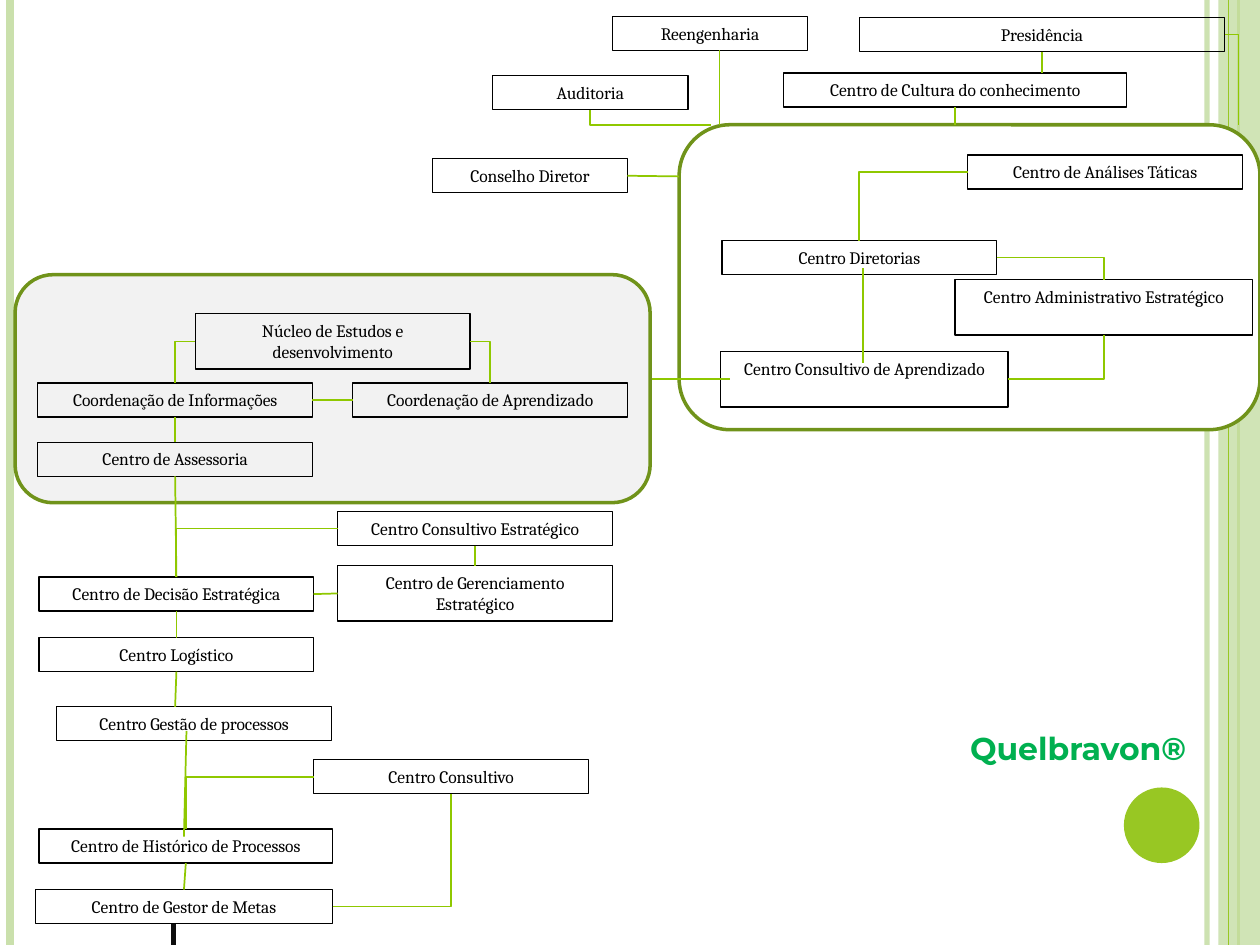
from dataclasses import dataclass
from typing import Any

from lxml.etree import SubElement
from pptx import Presentation
from pptx.dml.color import RGBColor
from pptx.enum.shapes import MSO_CONNECTOR as Connector, MSO_SHAPE as Preset
from pptx.enum.text import MSO_ANCHOR as Anchor, PP_ALIGN as Align
from pptx.oxml.ns import qn
from pptx.util import Inches, Pt


@dataclass(frozen=True)
class Theme:
    """Colours, fonts and type sizes of the chart."""
    white: str = "FFFFFF"
    black: str = "000000"
    stem: str = "0D0D0D"
    pale_green: str = "CAE0AC"
    green: str = "98C723"
    link: str = "8FC800"
    panel_line: str = "70931A"
    panel_grey: str = "F2F2F2"
    brand: str = "00B050"
    label_font: str = "Cambria"
    brand_font: str = "Montserrat"
    label_size: float = 10
    brand_size: float = 18


THEME = Theme()
ROW, TALL, WIDE = 0.27, 0.44, 2.18


def set_alpha(fill_parent, percent):
    """Make the first solid colour under an element partly transparent."""
    color = next(fill_parent.iter(qn("a:srgbClr")))
    SubElement(color, qn("a:alpha")).set("val", str(percent * 1000))


def style_text(shape, text, font, size, color, bold=False, align=Align.CENTER):
    """Write one paragraph and format its run."""
    frame = shape.text_frame
    frame.word_wrap = True
    frame.vertical_anchor = Anchor.TOP
    frame.text = text
    paragraph = frame.paragraphs[0]
    paragraph.alignment = align
    run_font = paragraph.runs[0].font
    run_font.name, run_font.size, run_font.bold = font, Pt(size), bold
    run_font.color.rgb = RGBColor.from_string(color)


def side(shape, name):
    """Return the middle of one side of a shape."""
    middle_x, middle_y = shape.left + shape.width // 2, shape.top + shape.height // 2
    return {
        "left": (shape.left, middle_y),
        "right": (shape.left + shape.width, middle_y),
        "top": (middle_x, shape.top),
        "bottom": (middle_x, shape.top + shape.height),
    }[name]


@dataclass
class Region:
    """An area of the slide that places parts relative to its box."""
    slide: Any
    left: float
    top: float
    width: float
    height: float

    def point(self, x, y):
        """Return a slide position for an offset in the region."""
        return Inches(self.left + x), Inches(self.top + y)

    def shape(self, preset, x, y, width, height, fill=None, line=None, weight=0.75):
        """Add a preset shape."""
        shape = self.slide.shapes.add_shape(
            preset, *self.point(x, y), Inches(width), Inches(height))
        shape.shadow.inherit = False
        if fill:
            shape.fill.solid()
            shape.fill.fore_color.rgb = RGBColor.from_string(fill)
        else:
            shape.fill.background()
        if line:
            shape.line.color.rgb = RGBColor.from_string(line)
            shape.line.width = Pt(weight)
        else:
            shape.line.fill.background()
        return shape

    def panel(self, fill):
        """Frame the whole region with a rounded panel."""
        return self.shape(Preset.ROUNDED_RECTANGLE, 0, 0, self.width, self.height,
                          fill, THEME.panel_line, 2)

    def unit(self, text, x, y, width=WIDE, height=ROW):
        """Add one labelled organisation box."""
        shape = self.shape(Preset.RECTANGLE, x, y, width, height, line=THEME.black)
        style_text(shape, text, THEME.label_font, THEME.label_size, THEME.black)
        return shape

    def line(self, start, end, color=THEME.link, weight=1, bent=False):
        """Join two positions, going sideways first when bent."""
        line = self.slide.shapes.add_connector(Connector.STRAIGHT, *start, *end)
        line.line.color.rgb = RGBColor.from_string(color)
        line.line.width = Pt(weight)
        properties = line._element.spPr
        SubElement(properties, qn("a:effectLst"))
        if bent:
            properties.find(qn("a:prstGeom")).set("prst", "bentConnector2")
        return line

    def bend(self, start, end):
        """Join two positions with one right angle."""
        return self.line(start, end, bent=True)

    def drop(self, upper, lower):
        """Join the bottom of one unit to the top of another."""
        return self.line(side(upper, "bottom"), side(lower, "top"))


def draw_backdrop(region):
    """Draw the vertical stripes and the corner disc."""
    def stripe(x, color, weight):
        return region.line(region.point(x, 0), region.point(x, region.height), color, weight)

    set_alpha(stripe(9.58, THEME.pale_green, 3)._element.spPr, 93)
    stripe(0.08, THEME.pale_green, 4.5)
    stripe(9.83, THEME.green, 1.5)
    band = region.shape(Preset.RECTANGLE, 9.67, 0, 0.33, region.height, THEME.pale_green)
    set_alpha(band._element.spPr, 87)
    stripe(9.75, THEME.green, 0.75)
    region.shape(Preset.OVAL, 8.92, 6.25, 0.6, 0.6, THEME.green)


def draw_directorate(region):
    """Draw the panel of directorate centres."""
    region.panel(THEME.white)
    learning = region.unit("Centro Consultivo de Aprendizado", 0.33, 1.8, 2.28, TALL)
    directors = region.unit("Centro Diretorias", 0.34, 0.92)
    strategy = region.unit("Centro Administrativo Estratégico", 2.19, 1.23, 2.36, TALL)
    tactics = region.unit("Centro de Análises Táticas", 2.29, 0.24)
    region.line(region.point(0.4, 2.02), region.point(-0.26, 2.02))
    region.line(region.point(1.46, 1.14), region.point(1.46, 1.89))
    region.bend(side(directors, "right"), side(strategy, "top"))
    region.bend(side(learning, "right"), side(strategy, "bottom"))
    region.bend(side(tactics, "left"), side(directors, "top"))


def draw_studies(region):
    """Draw the studies panel and return its lowest unit."""
    region.panel(THEME.panel_grey)
    core = region.unit("Núcleo de Estudos e desenvolvimento", 1.43, 0.31, height=TALL)
    information = region.unit("Coordenação de Informações", 0.18, 0.86)
    learning = region.unit("Coordenação de Aprendizado", 2.68, 0.86)
    advice = region.unit("Centro de Assessoria", 0.18, 1.33)
    region.bend(side(core, "left"), side(information, "top"))
    region.bend(side(core, "right"), side(learning, "top"))
    region.line(side(information, "right"), side(learning, "left"))
    region.drop(information, advice)
    return advice


def draw_processes(region, advice):
    """Draw the chain of centres that hangs below the advice unit."""
    strategic = region.unit("Centro Consultivo Estratégico", 2.4, 0)
    management = region.unit("Centro de Gerenciamento Estratégico", 2.4, 0.43, height=TALL)
    decision = region.unit("Centro de Decisão Estratégica", 0.03, 0.52)
    logistics = region.unit("Centro Logístico", 0.03, 1)
    process = region.unit("Centro Gestão de processos", 0.17, 1.55)
    consulting = region.unit("Centro Consultivo", 2.21, 1.97)
    history = region.unit("Centro de Histórico de Processos", 0.03, 2.52, 2.33)
    goals = region.unit("Centro de Gestor de Metas", 0, 3, 2.36)
    for upper, lower in ((advice, decision), (strategic, management),
                         (decision, logistics), (history, goals)):
        region.drop(upper, lower)
    region.bend(side(strategic, "left"), side(decision, "top"))
    region.line(side(management, "left"), side(decision, "right"))
    region.line(side(logistics, "bottom"), region.point(1.11, 1.55))
    region.line(region.point(1.2, 1.74), region.point(1.18, 2.58))
    region.bend(side(consulting, "left"), side(history, "top"))
    region.bend(side(goals, "right"), side(consulting, "bottom"))
    region.line(region.point(1.1, 3.27), region.point(1.1, region.height), THEME.stem, 3)


def draw_governance(region):
    """Draw the governing units and their links to the directorate."""
    council = region.unit("Conselho Diretor", 0, 1.13, 1.55)
    audit = region.unit("Auditoria", 0.48, 0.47, 1.55)
    region.unit("Reengenharia", 1.43, 0, 1.55)
    culture = region.unit("Centro de Cultura do conhecimento", 2.79, 0.45, 2.72)
    presidency = region.unit("Presidência", 3.39, 0.01, 2.9)
    region.line(side(council, "right"), region.point(1.96, 1.27))
    region.bend(region.point(2.21, region.height), side(audit, "bottom"))
    region.line(region.point(2.28, ROW), region.point(2.28, region.height))
    region.line(side(culture, "bottom"), region.point(4.15, region.height))
    region.bend(side(presidency, "right"), region.point(6.4, region.height))
    region.line(side(presidency, "bottom"), region.point(4.84, 0.45))


def draw_brand(region):
    """Write the brand name."""
    box = region.slide.shapes.add_textbox(
        *region.point(0, 0), Inches(region.width), Inches(region.height))
    style_text(box, "Quelbravon®", THEME.brand_font, THEME.brand_size,
               THEME.brand, True, Align.LEFT)


def main():
    """Build and save the organisation chart."""
    presentation = Presentation()
    presentation.slide_width, presentation.slide_height = Inches(10), Inches(7.5)
    slide = presentation.slides.add_slide(presentation.slide_layouts[6])
    draw_backdrop(Region(slide, 0, 0, 10, 7.5))
    draw_directorate(Region(slide, 5.39, 0.99, 4.61, 2.42))
    advice = draw_studies(Region(slide, 0.12, 2.18, 5.04, 1.81))
    draw_processes(Region(slide, 0.28, 4.06, 4.58, 3.44), advice)
    draw_governance(Region(slide, 3.43, 0.13, 6.4, 0.86))
    draw_brand(Region(slide, 7.6, 5.74, 2.05, 0.4))
    presentation.save("out.pptx")


if __name__ == "__main__":
    main()
